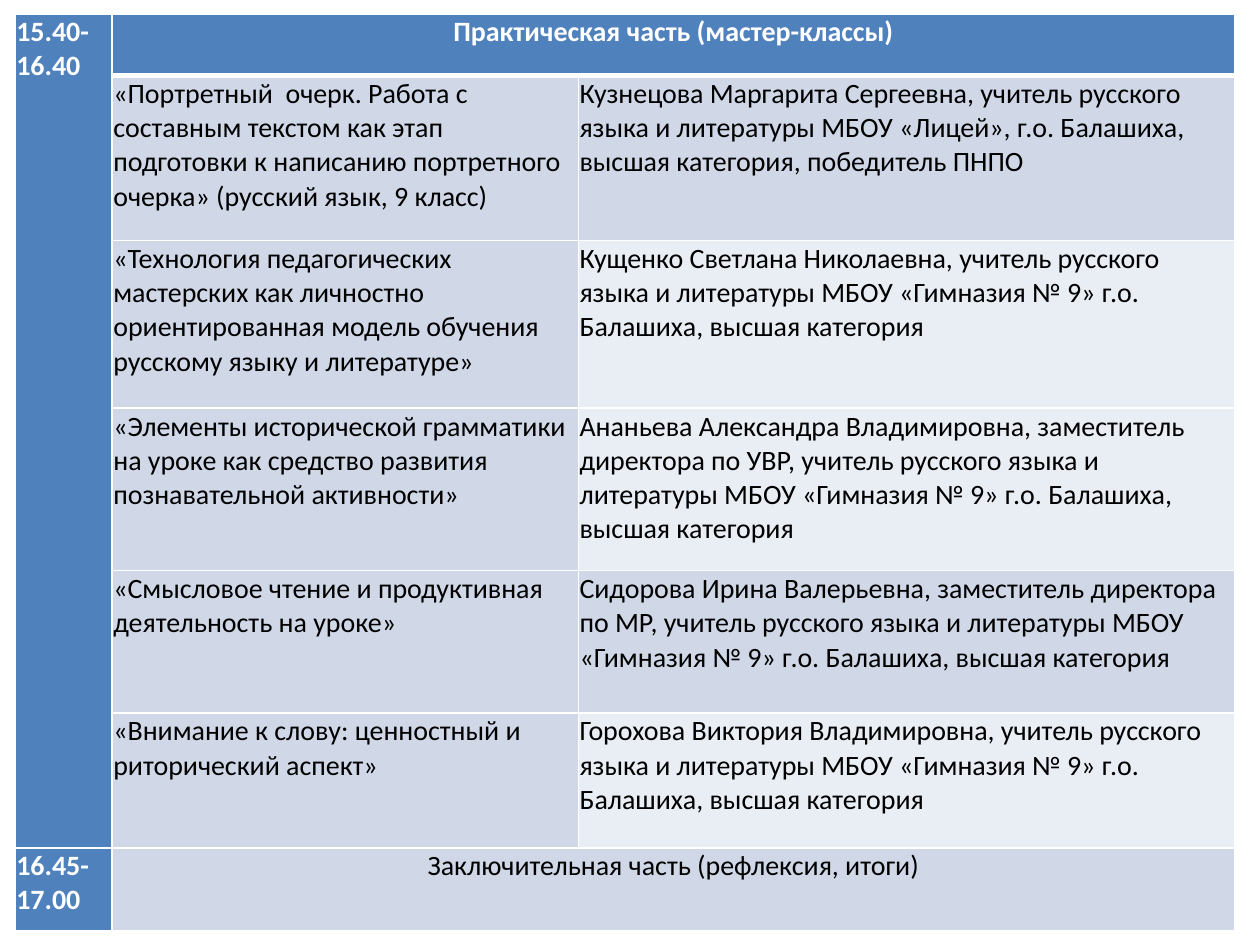
from lxml.etree import SubElement as Sub
from pptx import Presentation
from pptx.dml.color import RGBColor
from pptx.enum.text import PP_ALIGN as Align
from pptx.oxml.ns import qn
from pptx.util import Inches, Pt

WHITE = RGBColor(0xFF, 0xFF, 0xFF)
BLACK = RGBColor(0, 0, 0)
BLUE = RGBColor(0x4F, 0x81, 0xBD)
MID = RGBColor(0xD0, 0xD8, 0xE8)
PALE = RGBColor(0xE9, 0xED, 0xF4)

COLS = [0.77, 3.7, 5.21]
ROWS = [0.49, 1.31, 1.33, 1.29, 1.13, 1.07, 0.66]
TALKS = [
    ("«Портретный  очерк. Работа с составным текстом как этап подготовки к написанию портретного очерка» (русский язык, 9 класс)",
     "Кузнецова Маргарита Сергеевна, учитель русского языка и литературы МБОУ «Лицей», г.о. Балашиха, высшая категория, победитель ПНПО", MID),
    ("«Технология педагогических мастерских как личностно ориентированная модель обучения русскому языку и литературе»",
     "Кущенко Светлана Николаевна, учитель русского языка и литературы МБОУ «Гимназия № 9» г.о. Балашиха, высшая категория", PALE),
    ("«Элементы исторической грамматики на уроке как средство развития познавательной активности»",
     "Ананьева Александра Владимировна, заместитель директора по УВР, учитель русского языка и литературы МБОУ «Гимназия № 9» г.о. Балашиха, высшая категория", PALE),
    ("«Смысловое чтение и продуктивная деятельность на уроке»",
     "Сидорова Ирина Валерьевна, заместитель директора по МР, учитель русского языка и литературы МБОУ «Гимназия № 9» г.о. Балашиха, высшая категория", MID),
    ("«Внимание к слову: ценностный и риторический аспект»",
     "Горохова Виктория Владимировна, учитель русского языка и литературы МБОУ «Гимназия № 9» г.о. Балашиха, высшая категория", PALE),
]


class Deck:
    """Holds the table style and the current slide."""

    font, size, inset = "Calibri", Pt(16), Inches(0.01)

    def __init__(self, slide):
        self.slide = slide

    def table(self, left, top, cols, rows):
        frame = self.slide.shapes.add_table(
            len(rows), len(cols), Inches(left), Inches(top),
            Inches(sum(cols)), Inches(sum(rows)))
        grid = frame.table
        for col, width in zip(grid.columns, cols):
            col.width = Inches(width)
        for row, height in zip(grid.rows, rows):
            row.height = Inches(height)
        return grid

    def edges(self, cell, top=1, base=1):
        props = cell._tc.get_or_add_tcPr()
        for side, width in zip("LRTB", (1, 1, top, base)):
            line = Sub(props, qn(f"a:ln{side}"), w=str(Pt(width)))
            Sub(Sub(line, qn("a:solidFill")), qn("a:srgbClr"), val=str(WHITE))

    def paint(self, cell, fill):
        cell.fill.solid()
        cell.fill.fore_color.rgb = fill

    def text(self, cell, words, color=BLACK, bold=False, align=Align.LEFT):
        cell.margin_left = cell.margin_right = cell.margin_top = self.inset
        cell.margin_bottom = 0
        cell.text_frame.text = words
        para = cell.text_frame.paragraphs[0]
        para.alignment = align
        for run in para.runs:
            font = run.font
            font.name, font.size, font.bold = self.font, self.size, bold
            font.color.rgb = color


def main():
    prs = Presentation()
    prs.slide_width, prs.slide_height = Inches(10), Inches(7.5)
    deck = Deck(prs.slides.add_slide(prs.slide_layouts[6]))
    grid = deck.table(0.12, 0.11, COLS, ROWS)
    last = len(ROWS) - 1

    for row in range(len(ROWS)):
        for col in range(len(COLS)):
            cell = grid.cell(row, col)
            top = 3 if col and row == 1 else 1
            base = 3 if col and row == 0 else 1
            deck.edges(cell, top, base)
            deck.paint(cell, BLUE if col == 0 or row == 0 else MID)

    grid.cell(0, 0).merge(grid.cell(last - 1, 0))
    for row in (0, last):
        grid.cell(row, 1).merge(grid.cell(row, 2))

    deck.text(grid.cell(0, 0), "15.40- 16.40", WHITE, True)
    deck.text(grid.cell(0, 1), "Практическая часть (мастер-классы)", WHITE, True, Align.CENTER)
    for row, (topic, host, fill) in enumerate(TALKS, 1):
        deck.text(grid.cell(row, 1), topic)
        deck.text(grid.cell(row, 2), host)
        deck.paint(grid.cell(row, 2), fill)
    deck.text(grid.cell(last, 0), "16.45-17.00", WHITE, True)
    deck.text(grid.cell(last, 1), "Заключительная часть (рефлексия, итоги)", align=Align.CENTER)

    prs.save("out.pptx")


if __name__ == "__main__":
    main()
